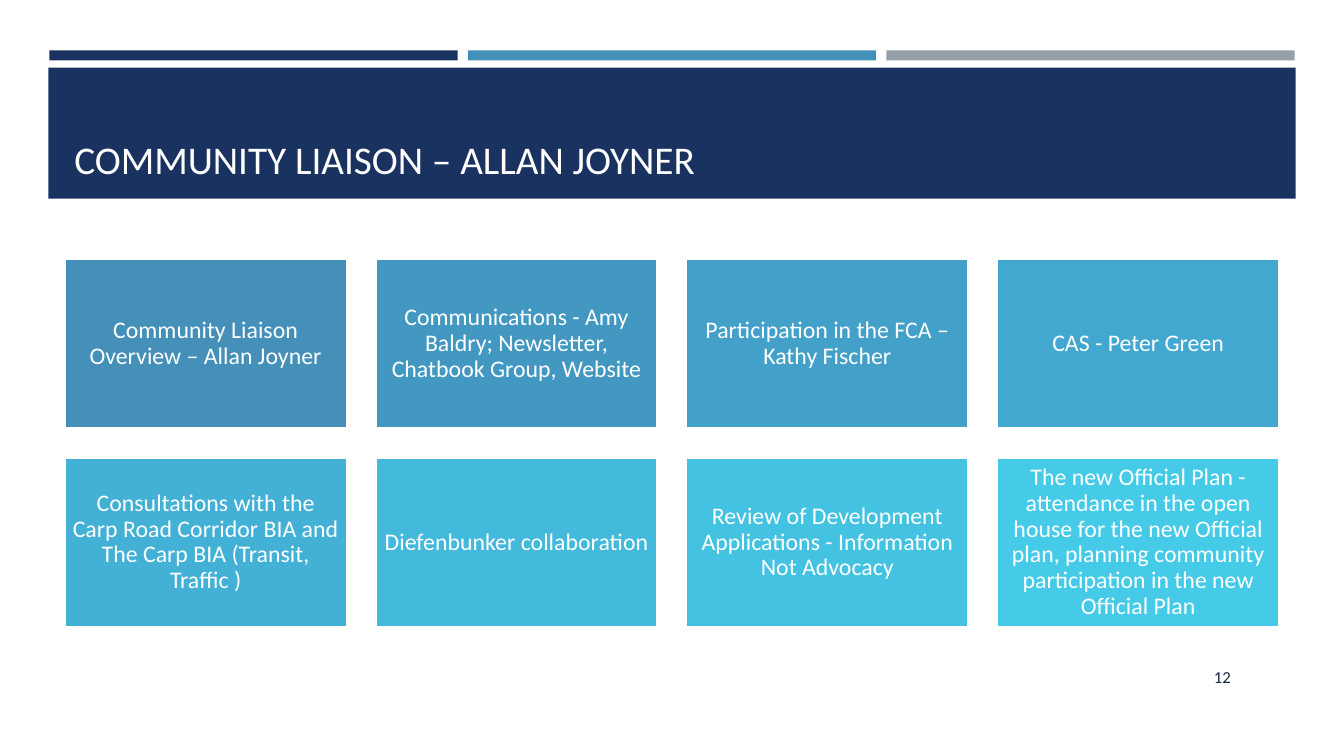
"""Build the community liaison slide: title band, accent bars and a grid of topics."""
from dataclasses import dataclass

from pptx import Presentation
from pptx.dml.color import RGBColor
from pptx.enum.shapes import MSO_SHAPE
from pptx.enum.text import MSO_ANCHOR, PP_ALIGN
from pptx.util import Inches, Pt

RECTANGLE = MSO_SHAPE.RECTANGLE
MIDDLE, BOTTOM = MSO_ANCHOR.MIDDLE, MSO_ANCHOR.BOTTOM
LEFT, CENTER = PP_ALIGN.LEFT, PP_ALIGN.CENTER
FONT = "Calibri"
NAVY, STEEL, GRAY, WHITE = "1A3260", "4590B8", "969FA7", "FFFFFF"


@dataclass(frozen=True)
class Area:
    """A rectangle on the slide, in inches."""
    left: float
    top: float
    width: float
    height: float


@dataclass(frozen=True)
class Grid:
    """Equal cells repeated at a fixed pitch from a first cell."""
    first: Area
    columns: int
    column_pitch: float
    row_pitch: float = 0

    def cell(self, index: int) -> Area:
        """Return the cell at an index, counted row by row."""
        row, column = divmod(index, self.columns)
        return Area(self.first.left + column * self.column_pitch,
                    self.first.top + row * self.row_pitch,
                    self.first.width, self.first.height)


@dataclass(frozen=True)
class Topic:
    """A tile of the grid."""
    text: str
    fill: str


BAR_GRID = Grid(Area(0.49, 0.5, 4.05, 0.1), 3, 4.15)
TOPIC_GRID = Grid(Area(0.64, 2.57, 2.8, 1.68), 4, 3.083, 1.97)
BAR_FILLS = (NAVY, STEEL, GRAY)
TOPICS = (
    Topic("Community Liaison Overview – Allan Joyner", STEEL),
    Topic("Communications - Amy Baldry; Newsletter, Chatbook Group, Website", "4398C1"),
    Topic("Participation in the FCA – Kathy Fischer", "43A0C8"),
    Topic("CAS - Peter Green", "43A8CF"),
    Topic("Consultations with the Carp Road Corridor BIA and "
          "The Carp BIA (Transit, Traffic )", "43B1D6"),
    Topic("Diefenbunker collaboration", "43B9DC"),
    Topic("Review of Development Applications - Information Not Advocacy", "44C2E2"),
    Topic("The new Official Plan - attendance in the open house for the new Official "
          "plan, planning community participation in the new Official Plan", "45CBE8"),
)


def color(value: str) -> RGBColor:
    """Turn a hex string into a colour."""
    return RGBColor.from_string(value)


def place(area: Area) -> tuple:
    """Turn an area into left, top, width and height lengths."""
    return tuple(Inches(n) for n in (area.left, area.top, area.width, area.height))


def add_block(page, area: Area, fill: str, line: str = ""):
    """Add a filled rectangle, outlined if a line colour is given."""
    block = page.shapes.add_shape(RECTANGLE, *place(area))
    block.shadow.inherit = False
    block.fill.solid()
    block.fill.fore_color.rgb = color(fill)
    if line:
        block.line.color.rgb = color(line)
        block.line.width = Pt(1.75)
    else:
        block.line.fill.background()
    return block


def write(box, text: str, *, size: float, ink: str = WHITE, align=CENTER,
          anchor=MIDDLE, inset: float = 0.1, spacing: float = 1.0) -> None:
    """Write one formatted paragraph into a shape."""
    frame = box.text_frame
    frame.word_wrap = True
    frame.vertical_anchor = anchor
    frame.margin_left = frame.margin_right = Inches(inset)
    frame.margin_top = frame.margin_bottom = Inches(min(inset, 0.07))
    para = frame.paragraphs[0]
    para.alignment = align
    para.line_spacing = spacing
    span = para.add_run()
    span.text = text
    span.font.name = FONT
    span.font.size = Pt(size)
    span.font.color.rgb = color(ink)


def main() -> None:
    """Draw the slide and save the deck."""
    deck = Presentation()
    deck.slide_width, deck.slide_height = Inches(13.33), Inches(7.5)
    page = deck.slides.add_slide(deck.slide_layouts[6])

    for index, fill in enumerate(BAR_FILLS):
        add_block(page, BAR_GRID.cell(index), fill)
    add_block(page, Area(0.48, 0.67, 12.37, 1.3), NAVY)

    title = page.shapes.add_textbox(*place(Area(0.64, 0.77, 12.06, 1.11)))
    write(title, "COMMUNITY LIAISON – ALLAN JOYNER", size=28, ink="FFFEFF",
          align=LEFT, anchor=BOTTOM)

    for index, topic in enumerate(TOPICS):
        tile = add_block(page, TOPIC_GRID.cell(index), topic.fill, WHITE)
        write(tile, topic.text, size=17, inset=0.07, spacing=0.9)

    number = page.shapes.add_textbox(*place(Area(11.55, 6.51, 1.15, 0.4)))
    write(number, "12", size=12, ink="132548")

    deck.save("out.pptx")


if __name__ == "__main__":
    main()
